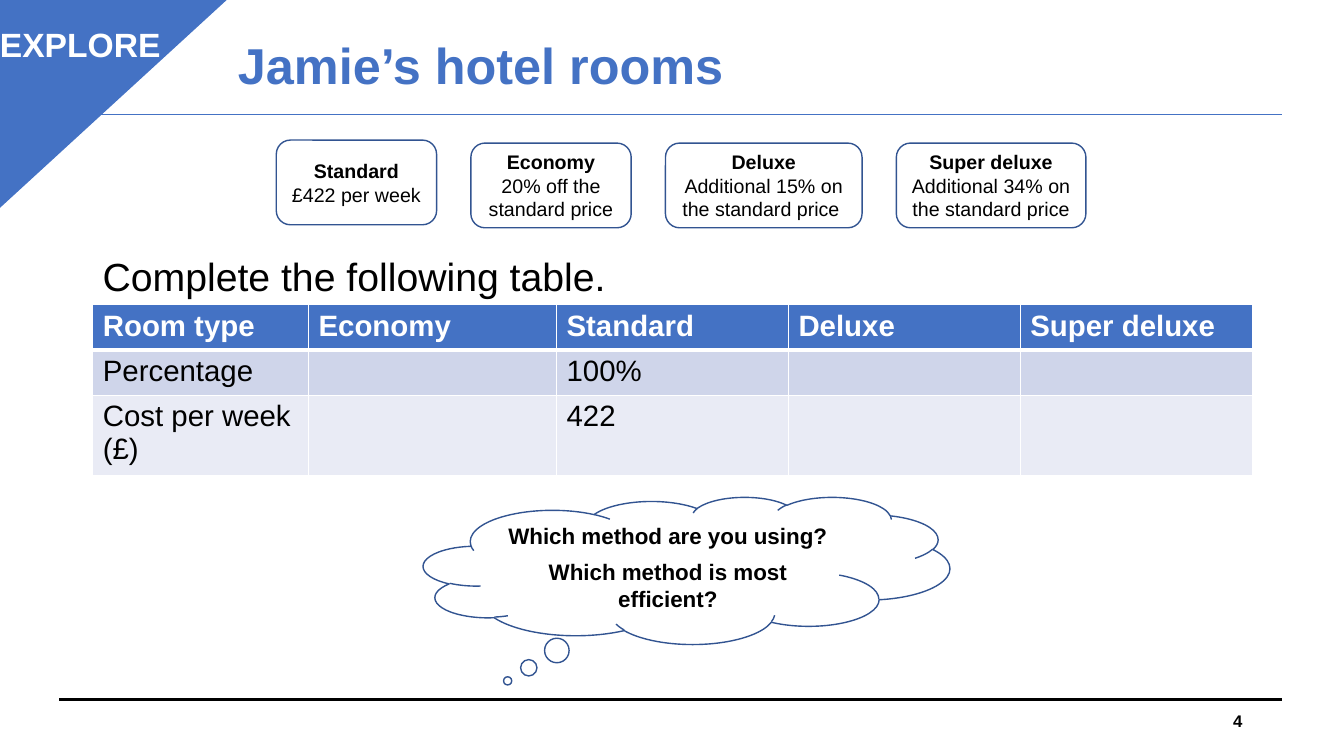
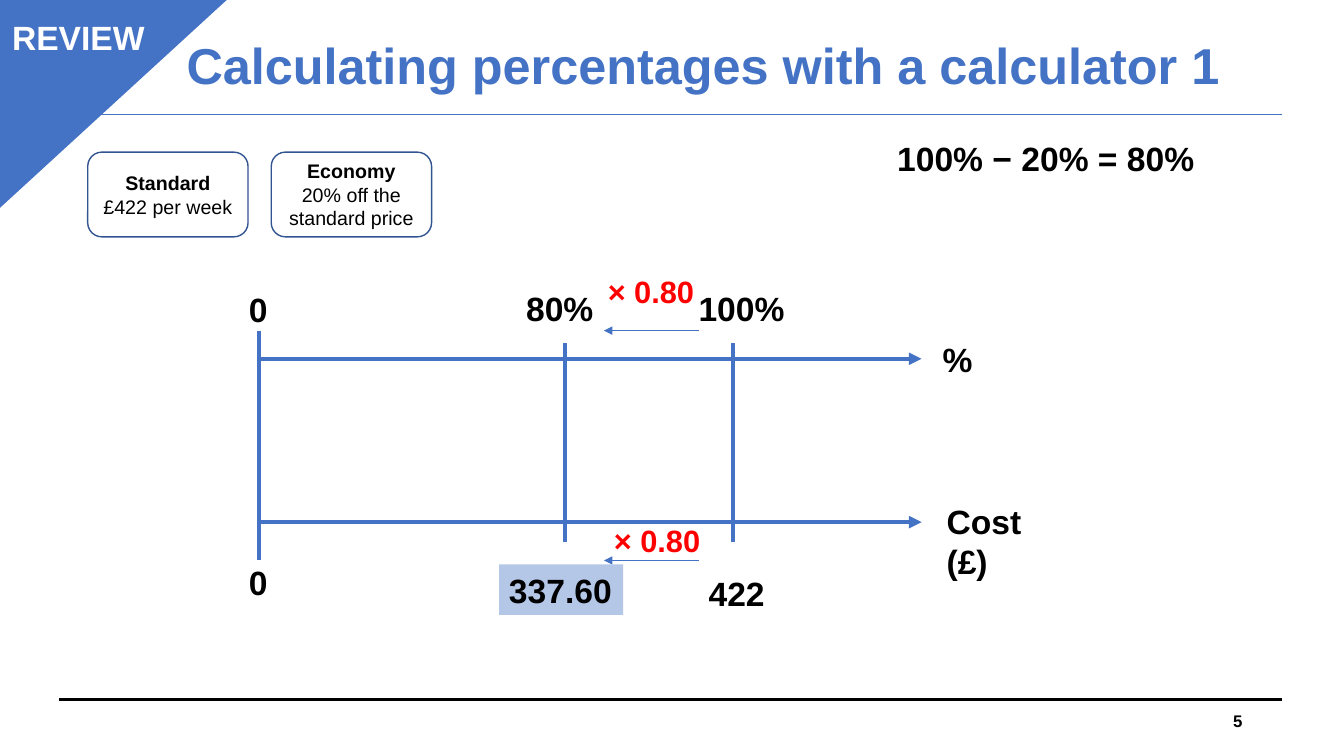
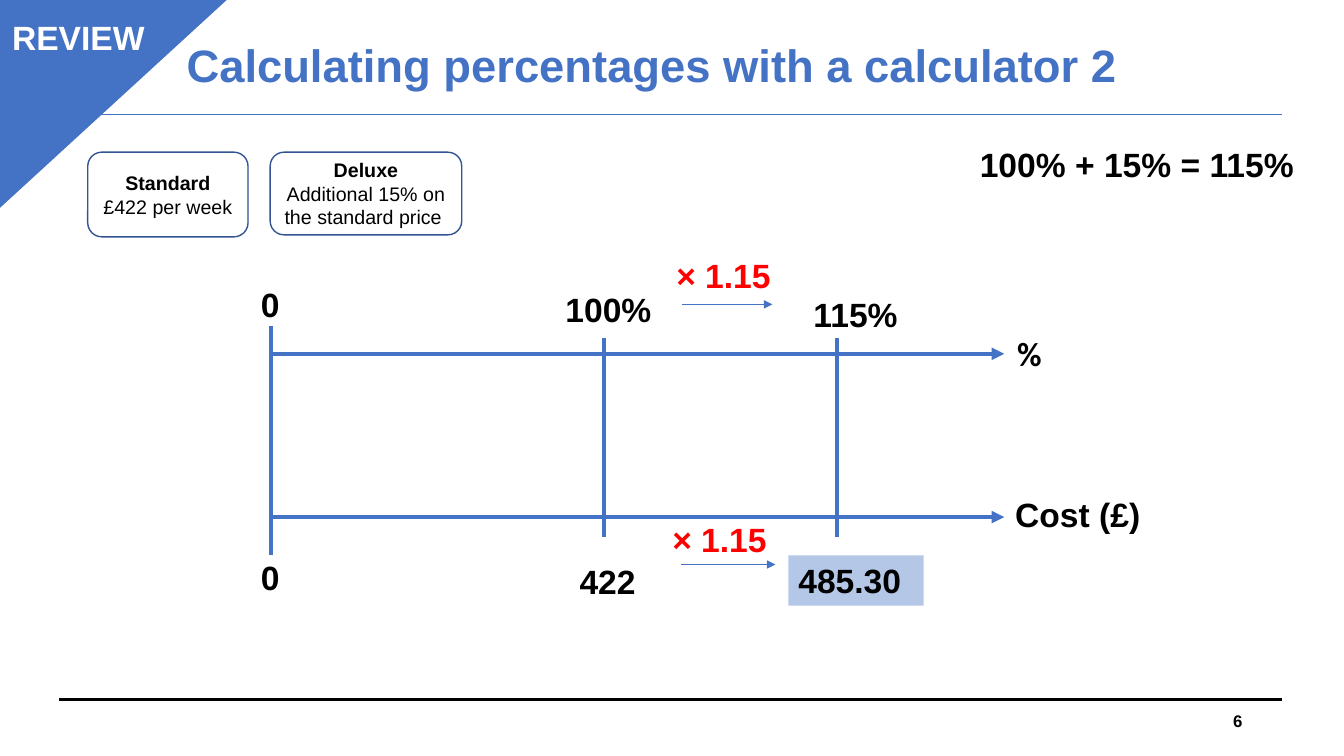
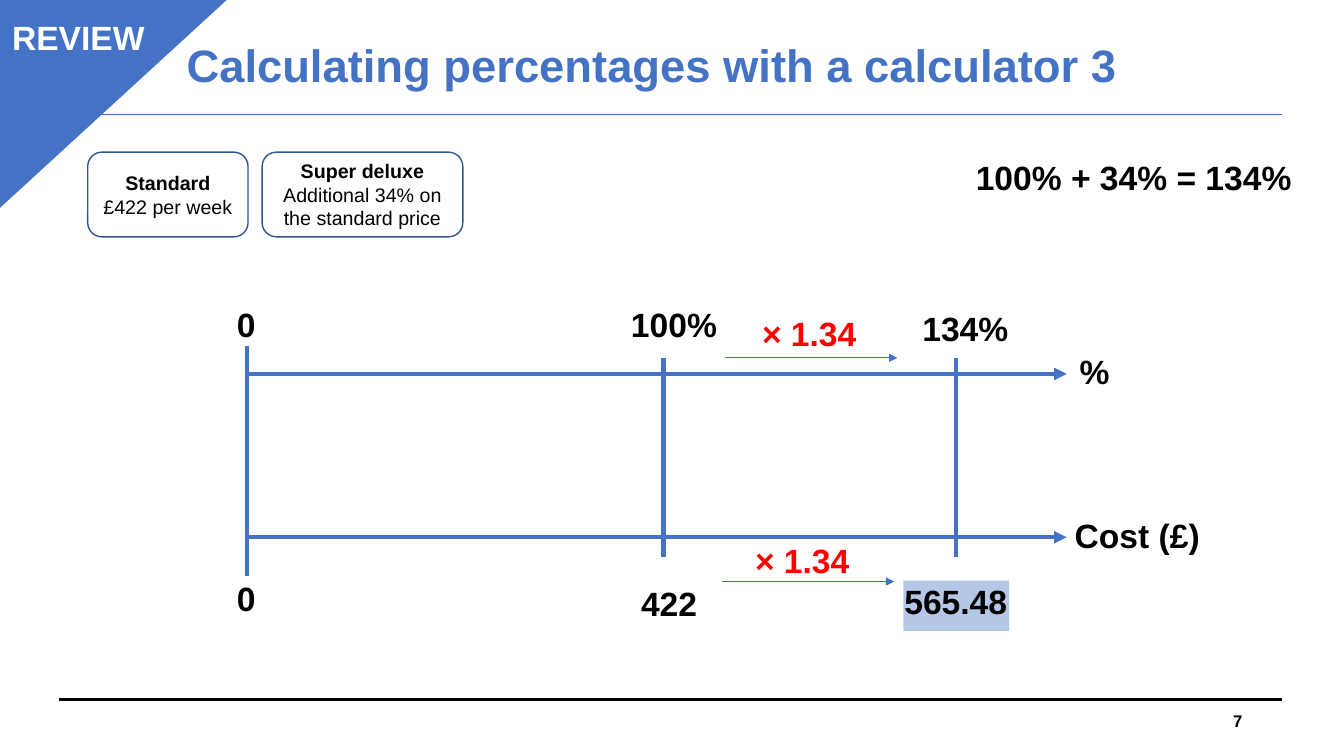
from lxml import etree
from pptx import Presentation
from pptx import util as u
from pptx.dml.color import RGBColor
from pptx.enum import shapes, text
from pptx.oxml.ns import qn

BLUE, OUTLINE, SHADE = "4472C4", "325491", "B4C7E7"
BLACK, WHITE, RED = "000000", "FFFFFF", "FF0000"
FONT = "Arial"
WIDTH, HEIGHT = 13.33, 7.5
MARGIN, RIGHT_END = 0.59, 12.72
LADDER_HEIGHT = 2.28
AXIS_ROWS = (0.28, 1.9)
TICK_ROWS = (0.12, 2.1)

ROOMS = {
    "Standard": "£422 per week",
    "Economy": "20% off the standard price",
    "Deluxe": "Additional 15% on the standard price ",
    "Super deluxe": "Additional 34% on the standard price",
}


def colour(value):
    return RGBColor.from_string(value)


def inches(*lengths):
    return [u.Inches(length) for length in lengths]


def style(para, size, ink=BLACK, bold=True, font=FONT):
    for span in para.runs:
        span.font.name, span.font.size, span.font.bold = font, u.Pt(size), bold
        span.font.color.rgb = colour(ink)


def add_text(page, box, words, size=24, ink=BLACK, bold=True, font=FONT,
             align=text.PP_ALIGN.LEFT, anchor=text.MSO_ANCHOR.TOP):
    label = page.shapes.add_textbox(*inches(*box))
    frame = label.text_frame
    frame.word_wrap, frame.vertical_anchor = True, anchor
    frame.text = words
    para = frame.paragraphs[0]
    para.alignment = align
    style(para, size, ink, bold, font)
    return label


def add_shape(page, kind, box, fill=None, outline=None):
    shape = page.shapes.add_shape(kind, *inches(*box))
    shape.shadow.inherit = False
    if fill:
        shape.fill.solid()
        shape.fill.fore_color.rgb = colour(fill)
    else:
        shape.fill.background()
    shape.line.color.rgb = colour(outline or fill)
    shape.line.width = u.Pt(1)
    return shape


def add_line(page, start, end, weight, ink=BLUE, arrow=False):
    line = page.shapes.add_connector(
        shapes.MSO_CONNECTOR.STRAIGHT, *inches(*start, *end))
    line.line.color.rgb = colour(ink)
    line.line.width = u.Pt(weight)
    properties = line.element.spPr
    if arrow:
        head = etree.SubElement(properties.find(qn("a:ln")), qn("a:tailEnd"))
        head.set("type", "triangle")
    etree.SubElement(properties, qn("a:effectLst"))
    return line


def add_rules(page, layout):
    """Draw the two rules and hand them to the shared layout."""
    for row, ink, weight in ((6.94, BLACK, 1.5), (1.14, BLUE, 0.75)):
        rule = add_line(page, (MARGIN, row), (RIGHT_END, row), weight, ink)
        layout.shapes.element.append(rule.element)


def add_page(deck, layout, title, title_box, number, stage, stage_place, title_size=36):
    page = deck.slides.add_slide(layout)
    # Title
    heading = page.shapes.title
    heading.left, heading.top, heading.width, heading.height = inches(*title_box)
    frame = heading.text_frame
    frame.text = title
    frame.auto_size = text.MSO_AUTO_SIZE.NONE
    frame.vertical_anchor = text.MSO_ANCHOR.MIDDLE
    para = frame.paragraphs[0]
    para.alignment, para.line_spacing = text.PP_ALIGN.LEFT, 0.9
    style(para, title_size, BLUE)
    # Page number
    add_text(page, (9.42, 6.95, 3, 0.4), str(number), 12,
             align=text.PP_ALIGN.RIGHT, anchor=text.MSO_ANCHOR.MIDDLE)
    # Corner with the lesson stage
    corner = add_shape(page, shapes.MSO_SHAPE.ISOSCELES_TRIANGLE,
                       (-0.03, -0.02, 2.29, 2.1), BLUE)
    corner.adjustments[0] = 1
    corner.rotation = 180
    stage_label = add_text(page, (*stage_place, 1.8, 0.5), stage, ink=WHITE)
    stage_label.text_frame.margin_left = stage_label.text_frame.margin_right = 0
    return page


def add_room(page, room, left, top, width, height=0.84):
    card = add_shape(page, shapes.MSO_SHAPE.ROUNDED_RECTANGLE,
                     (left, top, width, height), WHITE, OUTLINE)
    frame = card.text_frame
    frame.vertical_anchor = text.MSO_ANCHOR.MIDDLE
    frame.text = f"{room}\n{ROOMS[room]}"
    for para, bold in zip(frame.paragraphs, (True, False)):
        para.alignment = text.PP_ALIGN.CENTER
        style(para, 14, bold=bold)


def add_bottom_border(cell, weight, ink):
    border = etree.Element(qn("a:lnB"), w=str(u.Pt(weight)))
    fill = etree.SubElement(border, qn("a:solidFill"))
    etree.SubElement(fill, qn("a:srgbClr"), val=ink)
    cell.fill.solid()
    fill_parent = cell._tc.tcPr
    fill_parent.insert(0, border)


def add_price_table(page, left, top, columns, heights):
    rows = (
        ("Room type", "Economy", "Standard", "Deluxe", "Super deluxe"),
        ("Percentage", "", "100%", "", ""),
        ("Cost per week (£)", "", "422", "", ""),
    )
    table = page.shapes.add_table(
        len(rows), len(columns),
        *inches(left, top, sum(columns), sum(heights))).table
    for column, width in zip(table.columns, columns):
        column.width = u.Inches(width)
    for index, fill in enumerate((BLUE, "CFD5EA", "E9EBF5")):
        table.rows[index].height = u.Inches(heights[index])
        heading = index == 0
        for cell, words in zip(table.rows[index].cells, rows[index]):
            if heading:
                add_bottom_border(cell, 3, WHITE)
            cell.fill.solid()
            cell.fill.fore_color.rgb = colour(fill)
            cell.text = words
            style(cell.text_frame.paragraphs[0], 21,
                  WHITE if heading else BLACK, heading)


def add_question_cloud(page, box):
    cloud = add_shape(page, shapes.MSO_SHAPE.CLOUD_CALLOUT, box, outline=OUTLINE)
    cloud.adjustments[0], cloud.adjustments[1] = -0.34, 0.75
    frame = cloud.text_frame
    frame.vertical_anchor = text.MSO_ANCHOR.MIDDLE
    frame.text = "Which method are you using?\nWhich method is most efficient?"
    for para in frame.paragraphs:
        para.alignment = text.PP_ALIGN.CENTER
        style(para, 16)
    frame.paragraphs[0].space_after = u.Pt(6)


def add_answer(page, box, words, inset):
    answer = add_shape(page, shapes.MSO_SHAPE.RECTANGLE, box, SHADE)
    answer.line.fill.background()
    frame = answer.text_frame
    frame.margin_left = frame.margin_right = u.Inches(inset)
    frame.margin_top = frame.margin_bottom = u.Inches(inset / 2)
    frame.vertical_anchor = text.MSO_ANCHOR.TOP
    frame.text = words
    frame.paragraphs[0].alignment = text.PP_ALIGN.LEFT
    style(frame.paragraphs[0], 24)


def add_number_lines(page, left, top, width, ticks, labels, axis_names,
                     factor, factor_places, factor_size, arrows,
                     answer, answer_box, inset=0.1, percent_font=FONT):
    """Draw a double number line; all places are relative to left and top."""
    def place(column, row):
        return left + column, top + row

    # Axes, zero line and ticks
    for row in AXIS_ROWS:
        add_line(page, place(0, row), place(width, row), 3, arrow=True)
    add_line(page, place(0, LADDER_HEIGHT), place(0, 0), 3)
    for column in ticks:
        add_line(page, place(column, TICK_ROWS[1]), place(column, TICK_ROWS[0]), 3)
    # Axis names
    for (column, row, span_width), words, font in zip(
            axis_names, ("%", "Cost (£)"), (percent_font, FONT)):
        add_text(page, (*place(column, row), span_width, 0.5), words, font=font)
    # Values on the lines
    for row in (-0.46, 2.25):
        add_text(page, (*place(-0.2, row), 0.42, 0.5), "0")
    for words, column, row in labels:
        add_text(page, (*place(column, row), 1.13, 0.5), words)
    # Multipliers and their arrows
    for spot in factor_places:
        add_text(page, (*place(*spot), 1.3, 0.5), factor, factor_size, RED)
    for start, end, row in arrows:
        add_line(page, place(start, row), place(end, row), 0.5, arrow=True)
    # Answer
    column, row, answer_width = answer_box
    add_answer(page, (*place(column, row), answer_width, 0.5), answer, inset)


REVIEWS = (
    dict(
        title_width=10.47, title_size=36,
        room=("Economy", 2.69, 1.51, 1.59),
        sum_text="100% − 20% = 80%", sum_box=(8.8, 1.32, 3.61, 0.5),
        lines=dict(
            left=2.57, top=3.28, width=6.57, ticks=(3.03, 4.7),
            labels=(("80%", 2.55, -0.47), ("100%", 4.26, -0.47), ("422", 4.36, 2.35)),
            axis_names=((6.68, 0.03, 0.6), (6.72, 1.64, 1.28)),
            factor="× 0.80", factor_size=22,
            factor_places=((3.36, -0.62), (3.42, 1.85)),
            arrows=((4.36, 3.42, 0), (4.36, 3.42, 2.28)),
            answer="337.60", answer_box=(2.38, 2.32, 1.23)),
    ),
    dict(
        title_width=10, title_size=32.4,
        room=("Deluxe", 2.68, 1.51, 1.9, 0.82),
        sum_text="100% + 15% = 115%", sum_box=(9.62, 1.38, 3.37, 0.5),
        lines=dict(
            left=2.69, top=3.23, width=7.27, ticks=(3.3, 5.61),
            labels=(("100%", 2.82, -0.41), ("422", 2.96, 2.29), ("115%", 5.28, -0.36)),
            axis_names=((7.3, 0.02, 0.6), (7.28, 1.62, 1.52)),
            factor="× 1.15", factor_size=24,
            factor_places=((3.92, -0.75), (3.88, 1.87)),
            arrows=((4.07, 4.97, -0.21), (4.06, 5, 2.37)),
            answer="485.30", answer_box=(5.13, 2.28, 1.34),
            percent_font="Calibri"),
    ),
    dict(
        title_width=10, title_size=32.4,
        room=("Super deluxe", 2.6, 1.51, 1.99),
        sum_text="100% + 34% = 134%", sum_box=(9.58, 1.51, 3.37, 0.5),
        lines=dict(
            left=2.45, top=3.43, width=8.13, ticks=(4.13, 7.03),
            labels=(("100%", 3.71, -0.46), ("422", 3.81, 2.3), ("134%", 6.6, -0.42)),
            axis_names=((8.16, 0, 0.6), (8.11, 1.63, 1.48)),
            factor="× 1.34", factor_size=24,
            factor_places=((5.01, -0.37), (4.94, 1.88)),
            arrows=((4.74, 6.45, 0.12), (4.71, 6.42, 2.34)),
            answer="565.48", answer_box=(6.51, 2.33, 1.05), inset=0.01),
    ),
)


def add_explore_page(deck, layout):
    page = add_page(deck, layout, "Jamie’s hotel rooms", (2.26, 0.12, 5.33, 1.11),
                    4, "EXPLORE", (0, 0.19))
    add_room(page, "Standard", 2.74, 1.39, 1.59)
    left, gap = 4.67, 0.34
    for room, width in (("Economy", 1.59), ("Deluxe", 1.95), ("Super deluxe", 1.88)):
        add_room(page, room, left, 1.42, width)
        left += width + gap
    add_text(page, (0.92, 2.45, 6.67, 0.57), "Complete the following table.", 28,
             bold=False)
    add_price_table(page, 0.92, 3.02, (2.14, 2.46, 2.3, 2.3, 2.3), (0.45, 0.45, 0.8))
    add_question_cloud(page, (4.2, 4.93, 5.22, 1.46))
    return page


def add_review_page(deck, layout, index, review):
    page = add_page(deck, layout, f"Calculating percentages with a calculator {index}",
                    (1.75, 0.12, review["title_width"], 1.11), index + 4,
                    "REVIEW", (0.12, 0.12), review["title_size"])
    add_room(page, "Standard", 0.87, 1.51, 1.59)
    add_room(page, *review["room"])
    add_text(page, review["sum_box"], review["sum_text"])
    add_number_lines(page, **review["lines"])


def main():
    deck = Presentation()
    deck.slide_width, deck.slide_height = inches(WIDTH, HEIGHT)
    layout = deck.slide_layouts[5]
    first_page = add_explore_page(deck, layout)
    add_rules(first_page, layout)
    for index, review in enumerate(REVIEWS, 1):
        add_review_page(deck, layout, index, review)
    deck.save("out.pptx")


if __name__ == "__main__":
    main()
